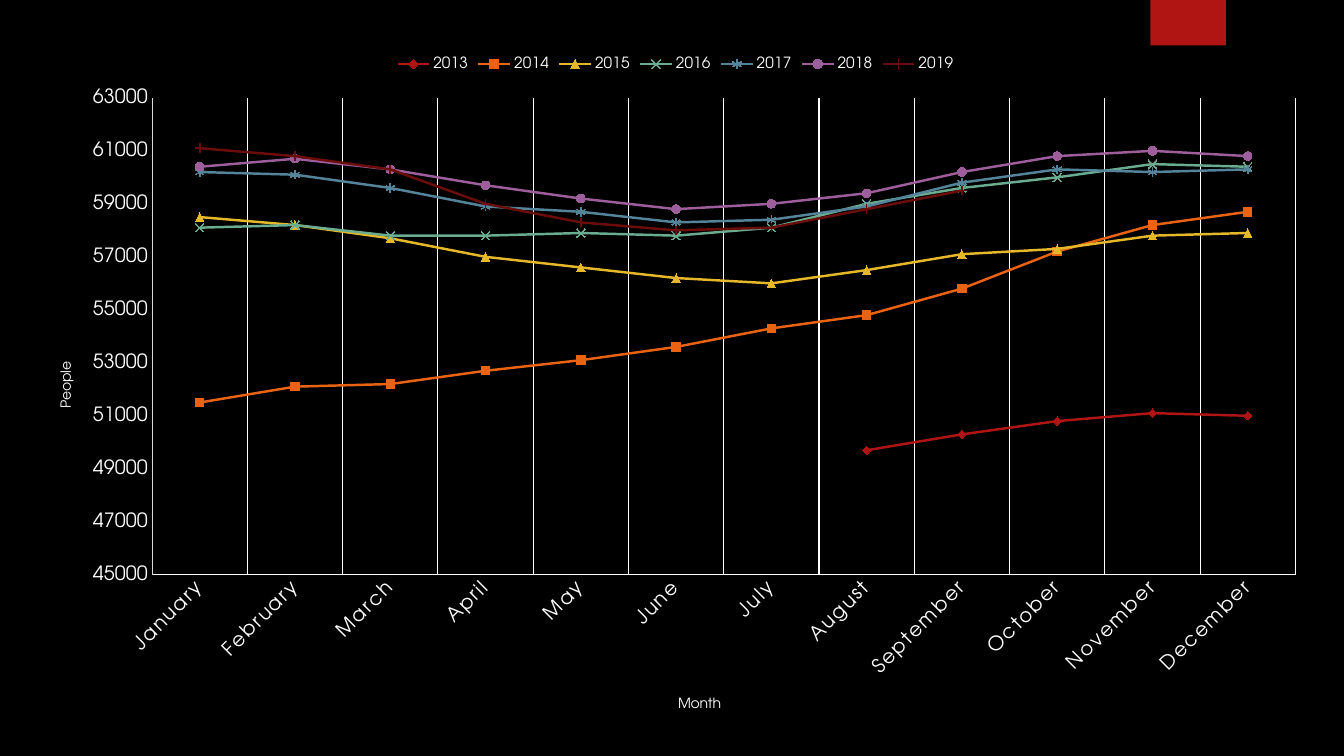
from lxml import etree
from pptx import Presentation
from pptx.chart.data import CategoryChartData
from pptx.dml.color import RGBColor
from pptx.enum.chart import (XL_CHART_TYPE, XL_LEGEND_POSITION,
                             XL_MARKER_STYLE, XL_TICK_MARK)
from pptx.enum.shapes import MSO_SHAPE
from pptx.oxml import parse_xml
from pptx.oxml.ns import nsdecls, qn
from pptx.util import Inches, Pt

LINE_MARKERS = XL_CHART_TYPE.LINE_MARKERS
LEGEND_TOP = XL_LEGEND_POSITION.TOP
NO_TICK = XL_TICK_MARK.NONE
RECTANGLE = MSO_SHAPE.RECTANGLE
MARK = XL_MARKER_STYLE

FONT = "TeX Gyre Adventor"
BLACK, WHITE, RED = "000000", "FFFFFF", "B01513"
MONTHS = ["January", "February", "March", "April", "May", "June", "July",
          "August", "September", "October", "November", "December"]
# Year: colour, marker, marker is filled, people in hundreds by month
YEARS = {
    "2013": (RED, MARK.DIAMOND, True,
             [None] * 7 + [497, 503, 508, 511, 510]),
    "2014": ("EA6312", MARK.SQUARE, True,
             [515, 521, 522, 527, 531, 536, 543, 548, 558, 572, 582, 587]),
    "2015": ("E6B729", MARK.TRIANGLE, True,
             [585, 582, 577, 570, 566, 562, 560, 565, 571, 573, 578, 579]),
    "2016": ("6AAC90", MARK.X, False,
             [581, 582, 578, 578, 579, 578, 581, 590, 596, 600, 605, 604]),
    "2017": ("54849A", MARK.STAR, False,
             [602, 601, 596, 589, 587, 583, 584, 589, 598, 603, 602, 603]),
    "2018": ("9E5E9B", MARK.CIRCLE, True,
             [604, 607, 603, 597, 592, 588, 590, 594, 602, 608, 610, 608]),
    "2019": ("6A0D0B", MARK.PLUS, False,
             [611, 608, 603, 590, 583, 580, 581, 588, 595] + [None] * 3),
}


def paint(color_format, color):
    color_format.rgb = RGBColor.from_string(color)


def fill_solid(fill, color):
    fill.solid()
    paint(fill.fore_color, color)


def set_line(line, color, width):
    paint(line.color, color)
    line.width = Pt(width)


def set_font(font, size):
    font.name, font.size, font.bold = FONT, Pt(size), False
    paint(font.color, WHITE)


def place(element, **shares):
    """Fix a chart part's position, in shares of the chart's size."""
    layout = element.find(qn("c:layout"))
    if layout is None:
        layout = etree.Element(qn("c:layout"))
        element.insert(0, layout)
    manual = etree.SubElement(layout, qn("c:manualLayout"))
    if "w" in shares:
        etree.SubElement(manual, qn("c:layoutTarget")).set("val", "inner")
    for side in "xy":
        etree.SubElement(manual, qn(f"c:{side}Mode")).set("val", "edge")
    for name, share in shares.items():
        etree.SubElement(manual, qn(f"c:{name}")).set("val", str(share))


def fill_chart_area(chart, color):
    area = parse_xml(
        f'<c:spPr {nsdecls("c", "a")}><a:solidFill><a:srgbClr val="{color}"/>'
        '</a:solidFill><a:ln><a:noFill/></a:ln></c:spPr>')
    chart._chartSpace.find(qn("c:chart")).addnext(area)


def format_axis(axis, title, line_color, x, y):
    axis.major_tick_mark = axis.minor_tick_mark = NO_TICK
    set_font(axis.tick_labels.font, 14)
    set_line(axis.format.line, line_color, 0.75)
    frame = axis.axis_title.text_frame
    frame.text = title
    set_font(frame.paragraphs[0].font, 10)
    place(axis.axis_title._element, x=x, y=y)


def format_month_axis(axis):
    format_axis(axis, "Month", WHITE, 0.5, 0.95)
    axis.has_major_gridlines = True
    set_line(axis.major_gridlines.format.line, WHITE, 0.75)
    labels = axis._element.find(qn("c:txPr"))
    labels.find(qn("a:bodyPr")).set("rot", "-2700000")
    next(labels.iter(qn("a:defRPr"))).set("spc", "120")


def format_people_axis(axis):
    format_axis(axis, "People", "D9D9D9", 0.02, 0.46)
    axis.has_major_gridlines = False
    axis.minimum_scale, axis.maximum_scale = 45000, 63000
    axis.major_unit = 2000
    axis.tick_labels.number_format = "0"
    axis.tick_labels.number_format_is_linked = False
    body = next(axis.axis_title._element.iter(qn("a:bodyPr")))
    body.set("rot", "-5400000")
    body.set("vert", "horz")


def format_series(series, color, style, filled):
    series.smooth = False
    set_line(series.format.line, color, 1.75)
    marker = series.marker
    marker.style, marker.size = style, 6
    set_line(marker.format.line, color, 0.75)
    if filled:
        fill_solid(marker.format.fill, color)
    else:
        marker.format.fill.background()


def add_people_chart(page):
    data = CategoryChartData(number_format="0")
    data.categories = MONTHS
    for year, (_, _, _, hundreds) in YEARS.items():
        data.add_series(year, [n and n * 100 for n in hundreds])
    chart = page.shapes.add_chart(
        LINE_MARKERS, Inches(0.3), Inches(0.45), Inches(12.8), Inches(6.77),
        data).chart
    chart.has_title = False
    set_font(chart.font, 10)
    fill_chart_area(chart, BLACK)
    chart.has_legend = True
    chart.legend.position = LEGEND_TOP
    chart.legend.include_in_layout = False
    set_font(chart.legend.font, 11)
    chart.plots[0].vary_by_categories = False
    format_month_axis(chart.category_axis)
    format_people_axis(chart.value_axis)
    for series in chart.plots[0].series:
        format_series(series, *YEARS[series.name][:3])
    plot_area = next(chart._chartSpace.iter(qn("c:plotArea")))
    place(plot_area, x=0.0944, y=0.077, w=0.886, h=0.699)


def add_tab(page):
    tab = page.shapes.add_shape(
        RECTANGLE, Inches(11.41), 0, Inches(0.75), Inches(1.25))
    tab.shadow.inherit = False
    fill_solid(tab.fill, RED)
    tab.line.fill.background()


def main():
    deck = Presentation()
    deck.slide_width, deck.slide_height = Inches(13.33), Inches(7.5)
    page = deck.slides.add_slide(deck.slide_layouts[6])
    fill_solid(page.background.fill, BLACK)
    add_tab(page)
    add_people_chart(page)
    deck.save("out.pptx")


if __name__ == "__main__":
    main()
